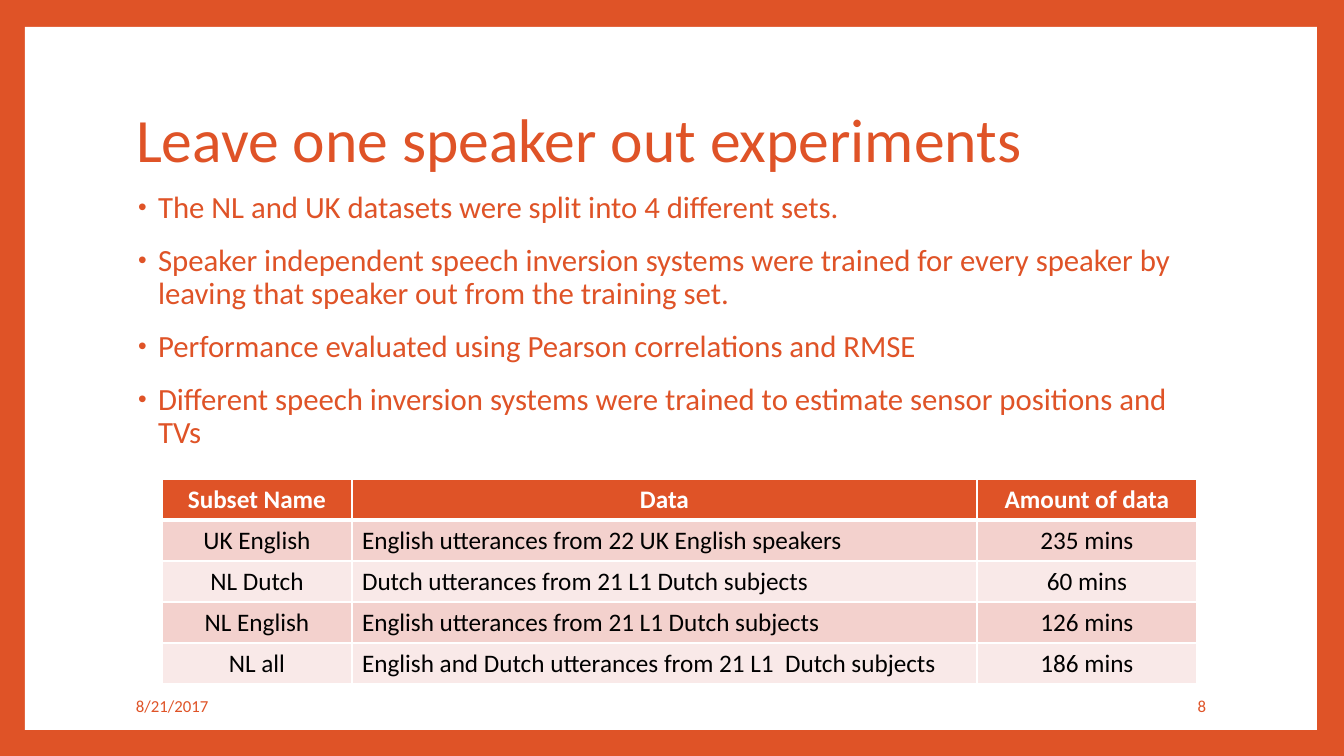
from lxml.etree import SubElement
from pptx import Presentation
from pptx.dml.color import RGBColor
from pptx.enum.shapes import MSO_SHAPE
from pptx.enum.text import MSO_ANCHOR, MSO_AUTO_SIZE, PP_ALIGN
from pptx.oxml import parse_xml
from pptx.oxml.ns import nsdecls, qn
from pptx.util import Pt

PX = 914400 / 100.8
FONT = "Calibri"
COLORS = {
    "accent": "DF5327",
    "paper": "FFFFFF",
    "ink": "000000",
    "band_dark": "F3D1CD",
    "band_light": "F9E9E8",
}

BULLETS = [
    "The NL and UK datasets were split into 4 different sets.",
    "Speaker independent speech inversion systems were trained for every speaker by "
    "leaving that speaker out from the training set.",
    "Performance evaluated using Pearson correlations and RMSE",
    "Different speech inversion systems were trained to estimate sensor positions and TVs",
]
SUBSETS = [
    ("Subset Name", "Data", "Amount of data"),
    ("UK English", "English utterances from 22 UK English speakers", "235 mins"),
    ("NL Dutch", "Dutch utterances from 21 L1 Dutch subjects", "60 mins"),
    ("NL English", "English utterances from 21 L1 Dutch subjects", "126 mins"),
    ("NL all", "English and Dutch utterances from 21 L1  Dutch subjects", "186 mins"),
]
COLUMN_WIDTHS = [190, 625, 220]
COLUMN_ALIGNS = [PP_ALIGN.CENTER, PP_ALIGN.JUSTIFY, PP_ALIGN.CENTER]
ROW_HEIGHT = 41


def px(n):
    return round(n * PX)


def rgb(name):
    return RGBColor.from_string(COLORS[name])


def place(sp, box):
    sp.left, sp.top, sp.width, sp.height = map(px, box)


def style_text(p, size, color="accent", bold=False, align=PP_ALIGN.LEFT):
    p.alignment = align
    for r in p.runs:
        r.font.name = FONT
        r.font.size = Pt(size)
        r.font.bold = bold
        r.font.color.rgb = rgb(color)


def add_frame(slide, box):
    """Colour the background and lay the white page on it."""
    slide.background.fill.solid()
    slide.background.fill.fore_color.rgb = rgb("accent")
    sp = slide.shapes.add_shape(MSO_SHAPE.RECTANGLE, *map(px, box))
    sp.shadow.inherit = False
    sp.fill.solid()
    sp.fill.fore_color.rgb = rgb("paper")
    sp.line.fill.background()
    # Keep the page behind the placeholders.
    slide.shapes._spTree.insert(2, sp._element)


def fill_title(sp, box, text):
    place(sp, box)
    tf = sp.text_frame
    tf.text = text
    tf.auto_size = MSO_AUTO_SIZE.NONE
    tf.vertical_anchor = MSO_ANCHOR.MIDDLE
    tf.paragraphs[0].line_spacing = 0.9
    style_text(tf.paragraphs[0], 44)


def add_bullet(p):
    pPr = p._p.get_or_add_pPr()
    pPr.set("marL", str(px(25)))
    pPr.set("indent", str(px(-20)))
    color = SubElement(pPr, qn("a:buClr"))
    SubElement(color, qn("a:srgbClr"), val=COLORS["accent"])
    SubElement(pPr, qn("a:buSzPct"), val="80000")
    SubElement(pPr, qn("a:buFont"), typeface="Arial")
    SubElement(pPr, qn("a:buChar"), char="•")


def fill_body(sp, box, items):
    place(sp, box)
    tf = sp.text_frame
    tf.text = "\n".join(items)
    tf.auto_size = MSO_AUTO_SIZE.NONE
    for p in tf.paragraphs:
        p.line_spacing = 0.9
        p.space_before = Pt(14)
        style_text(p, 22)
        add_bullet(p)


def set_borders(cell, top, bottom):
    """Give the cell white borders; top and bottom are widths in points."""
    tcPr = cell._tc.get_or_add_tcPr()
    widths = {"lnL": 1, "lnR": 1, "lnT": top, "lnB": bottom}
    for i, (tag, width) in enumerate(widths.items()):
        tcPr.insert(i, parse_xml(
            f'<a:{tag} {nsdecls("a")} w="{Pt(width)}"><a:solidFill>'
            f'<a:srgbClr val="{COLORS["paper"]}"/></a:solidFill></a:{tag}>'))


def add_subset_table(slide, left, top):
    table = slide.shapes.add_table(
        len(SUBSETS), len(COLUMN_WIDTHS), px(left), px(top),
        px(sum(COLUMN_WIDTHS)), px(ROW_HEIGHT * len(SUBSETS))).table
    for column, width in zip(table.columns, COLUMN_WIDTHS):
        column.width = px(width)
    for i, values in enumerate(SUBSETS):
        table.rows[i].height = px(ROW_HEIGHT)
        header = i == 0
        band = "accent" if header else "band_dark" if i % 2 else "band_light"
        for j, value in enumerate(values):
            cell = table.cell(i, j)
            cell.text = value
            cell.fill.solid()
            cell.fill.fore_color.rgb = rgb(band)
            set_borders(cell, top=3 if i == 1 else 1, bottom=3 if header else 1)
            style_text(cell.text_frame.paragraphs[0], 18, "paper" if header else "ink",
                       header, PP_ALIGN.CENTER if header else COLUMN_ALIGNS[j])


def add_footer_text(slide, box, text, align):
    tf = slide.shapes.add_textbox(*map(px, box)).text_frame
    tf.word_wrap = True
    tf.vertical_anchor = MSO_ANCHOR.MIDDLE
    tf.text = text
    style_text(tf.paragraphs[0], 12, align=align)


def main():
    prs = Presentation()
    prs.slide_width, prs.slide_height = px(1344), px(756)
    slide = prs.slides.add_slide(prs.slide_layouts[1])
    add_frame(slide, (25, 27, 1292, 703))
    fill_title(slide.shapes.title, (126, 68, 1089, 149), "Leave one speaker out experiments")
    fill_body(slide.placeholders[1], (123, 187, 1089, 279), BULLETS)
    add_footer_text(slide, (126, 686, 257, 40), "8/21/2017", PP_ALIGN.LEFT)
    add_footer_text(slide, (1028, 686, 188, 40), "8", PP_ALIGN.RIGHT)
    add_subset_table(slide, 162, 479)
    prs.save("out.pptx")


if __name__ == "__main__":
    main()
